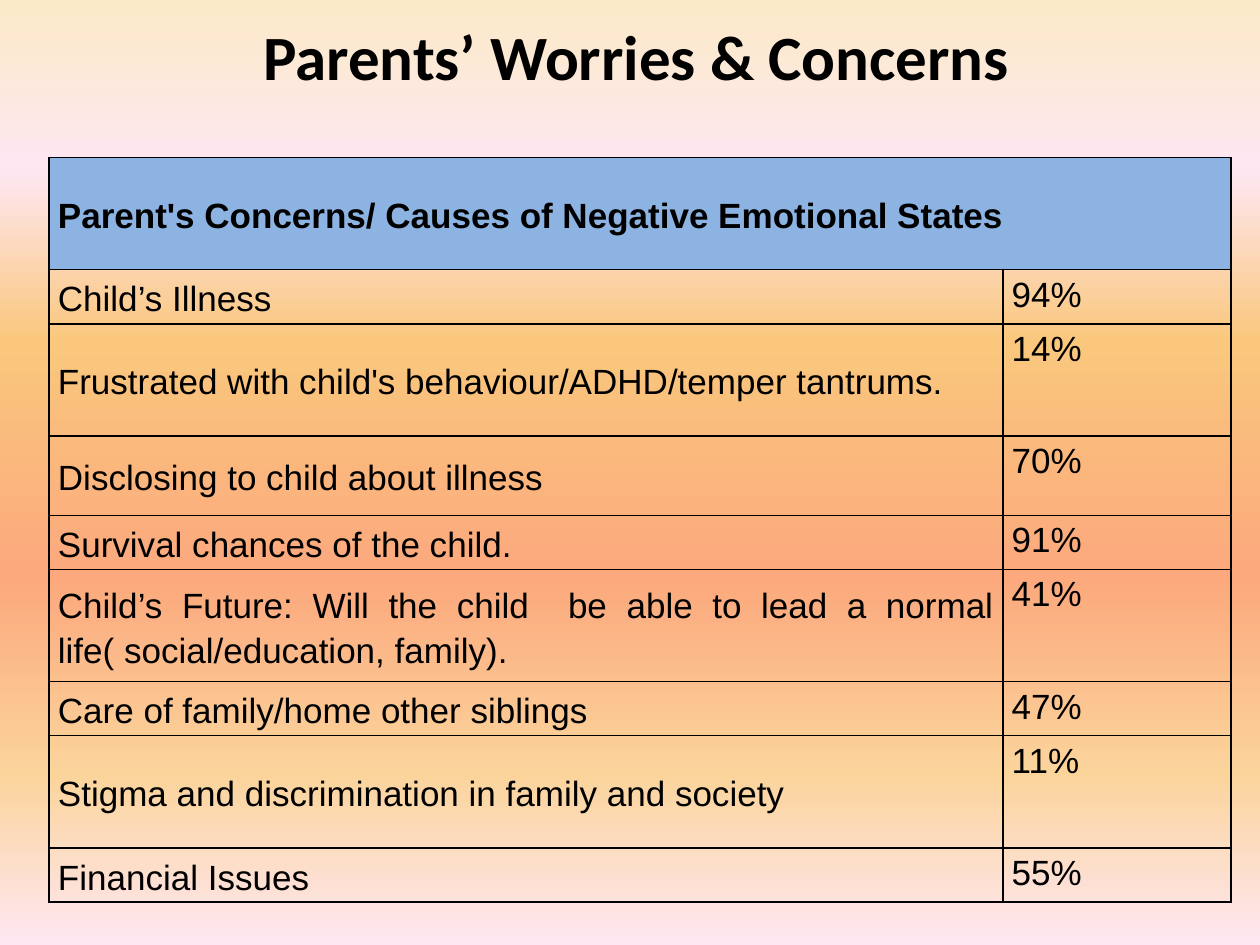
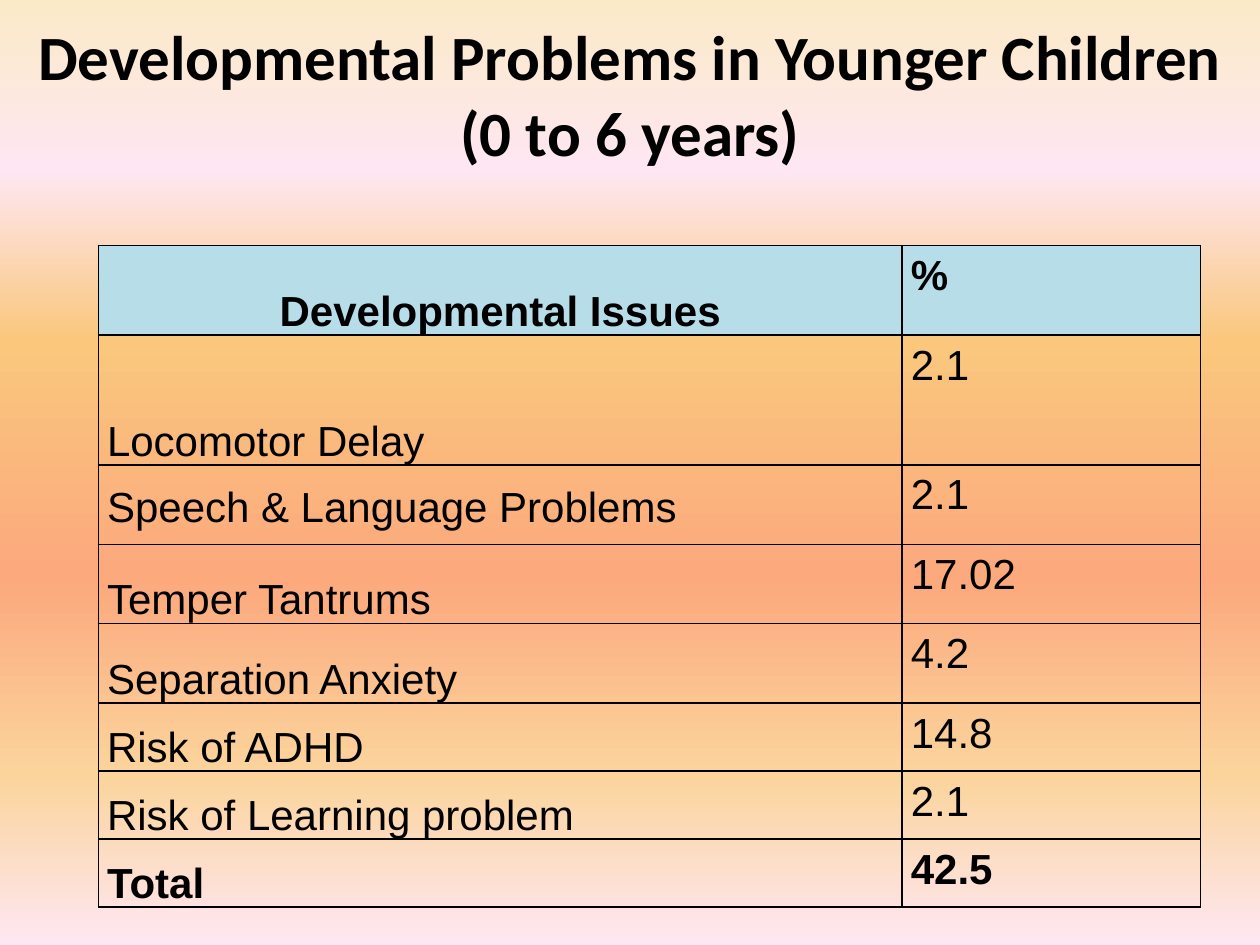
from lxml import etree
from pptx import Presentation
from pptx import util as u
from pptx.dml.color import RGBColor
from pptx.enum import text
from pptx.oxml.ns import qn

COLORS = {"ink": "000000", "concerns": "8DB3E2", "issues": "B6DDE8"}
SKY = [(0, "FBEAC7"), (18, "FEE7F2"), (36, "FAC77D"),
       (61, "FBA97D"), (82, "FBD49C"), (100, "FEE7F2")]
TOP, MIDDLE, BOTTOM = (text.MSO_ANCHOR.TOP, text.MSO_ANCHOR.MIDDLE,
                       text.MSO_ANCHOR.BOTTOM)
LEFT, CENTER, JUSTIFY = (text.PP_ALIGN.LEFT, text.PP_ALIGN.CENTER,
                         text.PP_ALIGN.JUSTIFY)


class SurveyDeck:
    """Hold the shared style and the slide being built."""

    def __init__(self):
        self.prs = Presentation()
        self.prs.slide_width = u.Inches(10)
        self.prs.slide_height = u.Inches(7.5)
        self.slide = None
        self.paint_background()

    def paint_background(self):
        master = self.prs.slide_master
        fill = master.background.fill
        fill.gradient()
        fill.gradient_angle = 270
        stops = master.element.find(".//" + qn("p:bg") + "//" + qn("a:gsLst"))
        for default_stop in list(stops):
            stops.remove(default_stop)
        for percent, color in SKY:
            stop = etree.SubElement(stops, qn("a:gs"), pos=str(percent * 1000))
            etree.SubElement(stop, qn("a:srgbClr"), val=color)

    def start_slide(self, heading, left, top, width, height):
        self.slide = self.prs.slides.add_slide(self.prs.slide_layouts[5])
        title = self.slide.shapes.title
        title.left, title.top = u.Inches(left), u.Inches(top)
        title.width, title.height = u.Inches(width), u.Inches(height)
        frame = title.text_frame
        frame.text = heading
        frame.auto_size = text.MSO_AUTO_SIZE.NONE
        frame.vertical_anchor = MIDDLE
        self.format_text(frame.paragraphs[0], 36, True, CENTER, "Calibri")

    def format_text(self, paragraph, size, bold, align, font="Arial"):
        paragraph.alignment = align
        for run in paragraph.runs:
            run.font.name = font
            run.font.size = u.Pt(size)
            run.font.bold = bold
            run.font.color.rgb = RGBColor.from_string(COLORS["ink"])

    def add_table(self, left, top, columns, heights):
        frame = self.slide.shapes.add_table(
            len(heights), len(columns), u.Inches(left), u.Inches(top),
            u.Inches(sum(columns)), u.Inches(sum(heights)))
        table = frame.table
        table.first_row = table.horz_banding = False
        for column, width in zip(table.columns, columns):
            column.width = u.Inches(width)
        for row, height in zip(table.rows, heights):
            row.height = u.Inches(height)
        return table

    def fill_cell(self, cell, words, size, align, anchor, bold=False, color=None):
        cell.text_frame.text = words
        cell.vertical_anchor = anchor
        cell.margin_left = cell.margin_right = u.Inches(0.07)
        cell.margin_top = cell.margin_bottom = 0
        paragraph = cell.text_frame.paragraphs[0]
        paragraph.line_spacing = 1.15
        self.format_text(paragraph, size, bold, align)
        if color:
            cell.fill.solid()
            cell.fill.fore_color.rgb = RGBColor.from_string(COLORS[color])
        else:
            cell.fill.background()
        self.draw_borders(cell)

    def draw_borders(self, cell):
        properties = cell._tc.get_or_add_tcPr()
        for place, side in enumerate(("a:lnL", "a:lnR", "a:lnT", "a:lnB")):
            line = etree.Element(qn(side), w=str(u.Pt(1)))
            solid = etree.SubElement(line, qn("a:solidFill"))
            etree.SubElement(solid, qn("a:srgbClr"), val=COLORS["ink"])
            properties.insert(place, line)


def add_concerns(deck):
    concerns = [
        ("Child’s Illness", "94%", 0.43),
        ("Frustrated with child's behaviour/ADHD/temper tantrums.", "14%", 0.89),
        ("Disclosing to child about illness", "70%", 0.63),
        ("Survival chances of the child.", "91%", 0.43),
        ("Child’s Future: Will the child  be able to lead a normal "
         "life( social/education, family).", "41%", 0.89),
        ("Care of family/home other siblings", "47%", 0.43),
        ("Stigma and discrimination in family and society", "11%", 0.89),
        ("Financial Issues", "55%", 0.43),
    ]
    deck.start_slide("Parents’ Worries & Concerns", 0.55, 0, 9, 0.87)
    table = deck.add_table(0.39, 1.25, [7.57, 1.81],
                           [0.89] + [height for _, _, height in concerns])
    heading = "Parent's Concerns/ Causes of Negative Emotional States"
    for column, words in enumerate((heading, "")):
        deck.fill_cell(table.cell(0, column), words, 20, JUSTIFY, MIDDLE,
                       True, "concerns")
    table.cell(0, 0).merge(table.cell(0, 1))
    for row, (concern, share, _) in enumerate(concerns, 1):
        deck.fill_cell(table.cell(row, 0), concern, 20, JUSTIFY, MIDDLE)
        deck.fill_cell(table.cell(row, 1), share, 20, JUSTIFY, TOP)


def add_issues(deck):
    issues = [
        ("Developmental Issues", "%", 0.71),
        ("Locomotor Delay", "2.1", 1.03),
        ("Speech & Language Problems", "2.1", 0.63),
        ("Temper Tantrums", "17.02", 0.63),
        ("Separation Anxiety", "4.2", 0.63),
        ("Risk of ADHD", "14.8", 0.54),
        ("Risk of Learning problem", "2.1", 0.54),
        ("Total", "42.5", 0.54),
    ]
    deck.start_slide("Developmental Problems in Younger Children (0 to 6 years)",
                     0, 0, 10, 1.48)
    table = deck.add_table(0.78, 1.95, [6.38, 2.37],
                           [height for _, _, height in issues])
    for row, (issue, share, _) in enumerate(issues):
        is_header = row == 0
        bold = is_header or issue == "Total"
        color = "issues" if is_header else None
        align = CENTER if is_header else LEFT
        anchor = MIDDLE if issue.startswith("Speech") else BOTTOM
        deck.fill_cell(table.cell(row, 0), issue, 24, align, anchor, bold, color)
        deck.fill_cell(table.cell(row, 1), share, 24, LEFT, TOP, bold, color)


def main():
    deck = SurveyDeck()
    add_concerns(deck)
    add_issues(deck)
    deck.prs.save("out.pptx")


if __name__ == "__main__":
    main()
